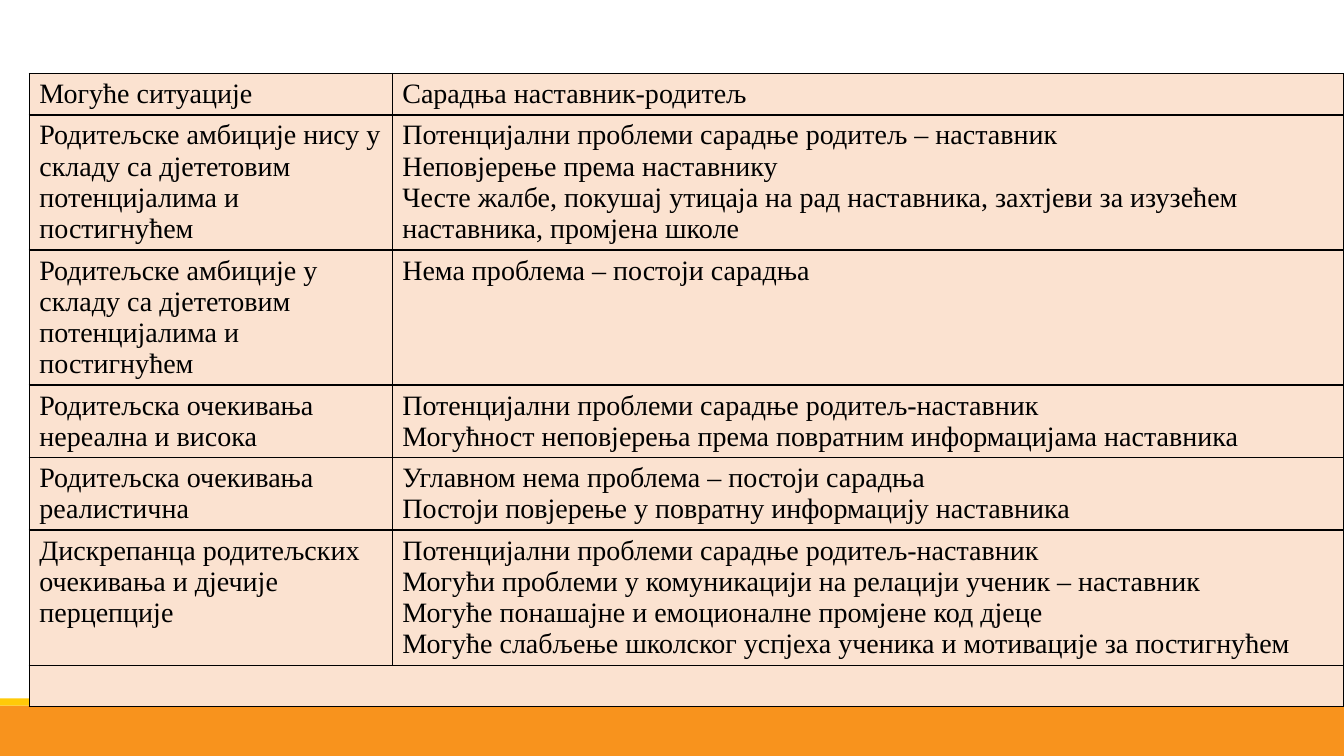
from lxml.etree import SubElement
from pptx import Presentation
from pptx.dml.color import RGBColor
from pptx.enum.shapes import MSO_SHAPE
from pptx.oxml.ns import qn
from pptx.util import Inches, Pt

BLACK = RGBColor(0x00, 0x00, 0x00)
PEACH = RGBColor(0xFB, 0xE2, 0xD0)
ORANGE = RGBColor(0xF8, 0x93, 0x1D)
YELLOW = RGBColor(0xFF, 0xCA, 0x08)
FONT = "Times New Roman"
WIDTH, HEIGHT = Inches(13.33), Inches(7.5)
COLS = (3.6, 9.44)
LINE, PAD = 0.31, 0.1
ROWS = [
    (1, ["Могуће ситуације"], ["Сарадња наставник-родитељ"]),
    (4, ["Родитељске амбиције нису у складу са дјететовим потенцијалима и постигнућем"],
     ["Потенцијални проблеми сарадње родитељ – наставник",
      "Неповјерење према наставнику",
      "Честе жалбе, покушај утицаја на рад наставника, захтјеви за изузећем "
      "наставника, промјена школе"]),
    (4, ["Родитељске амбиције у складу са дјететовим потенцијалима и постигнућем"],
     ["Нема проблема – постоји сарадња"]),
    (2, ["Родитељска очекивања нереална и висока"],
     ["Потенцијални проблеми сарадње родитељ-наставник",
      "Могућност неповјерења према повратним информацијама наставника"]),
    (2, ["Родитељска очекивања реалистична"],
     ["Углавном нема проблема – постоји сарадња",
      "Постоји повјерење у повратну информацију наставника"]),
    (4, ["Дискрепанца родитељских очекивања и дјечије перцепције"],
     ["Потенцијални проблеми сарадње родитељ-наставник",
      "Могући проблеми у комуникацији на релацији ученик – наставник",
      "Могуће понашајне и емоционалне промјене код дјеце",
      "Могуће слабљење школског успјеха ученика и мотивације за постигнућем"]),
    (1, [], []),
]


def add_band(slide, top, height, color):
    """Draw a full-width band."""
    band = slide.shapes.add_shape(MSO_SHAPE.RECTANGLE, 0, top, WIDTH, height)
    band.shadow.inherit = False
    band.fill.solid()
    band.fill.fore_color.rgb = color
    band.line.fill.background()


def add_edge(cell, side, width):
    """Give one side of a cell a black line."""
    props = cell._tc.get_or_add_tcPr()
    edge = SubElement(props, qn("a:" + side), w=str(Pt(width)))
    fill = SubElement(edge, qn("a:solidFill"))
    SubElement(fill, qn("a:srgbClr"), val=str(BLACK))


def fill_cell(cell, lines, row):
    """Style a cell and write its paragraphs."""
    for side in ("lnL", "lnR", "lnT", "lnB"):
        heavy = (row, side) in ((0, "lnB"), (1, "lnT"))
        add_edge(cell, side, 2 if heavy else 1)
    cell.fill.solid()
    cell.fill.fore_color.rgb = PEACH
    frame = cell.text_frame
    for index, line in enumerate(lines):
        para = frame.add_paragraph() if index else frame.paragraphs[0]
        run = para.add_run()
        run.text = line
        run.font.name = FONT
        run.font.size = Pt(20)
        run.font.color.rgb = BLACK


def add_grid(slide, left, top):
    """Build the table of situations and cooperation."""
    heights = [Inches(count * LINE + PAD) for count, *_ in ROWS]
    frame = slide.shapes.add_table(len(ROWS), len(COLS), left, top,
                                   Inches(sum(COLS)), sum(heights))
    table = frame.table
    table.first_row = table.horz_banding = False
    for col, width in zip(table.columns, COLS):
        col.width = Inches(width)
    for row, (_, *texts) in enumerate(ROWS):
        table.rows[row].height = heights[row]
        for col, lines in enumerate(texts):
            fill_cell(table.cell(row, col), lines, row)
    last = len(ROWS) - 1
    table.cell(last, 0).merge(table.cell(last, 1))


def main():
    """Build and save the slide."""
    deck = Presentation()
    deck.slide_width, deck.slide_height = WIDTH, HEIGHT
    slide = deck.slides.add_slide(deck.slide_layouts[6])
    add_band(slide, Inches(7), Inches(0.5), ORANGE)
    add_band(slide, Inches(6.93), Inches(0.07), YELLOW)
    add_grid(slide, Inches(0.29), Inches(0.73))
    deck.save("out.pptx")


if __name__ == "__main__":
    main()
